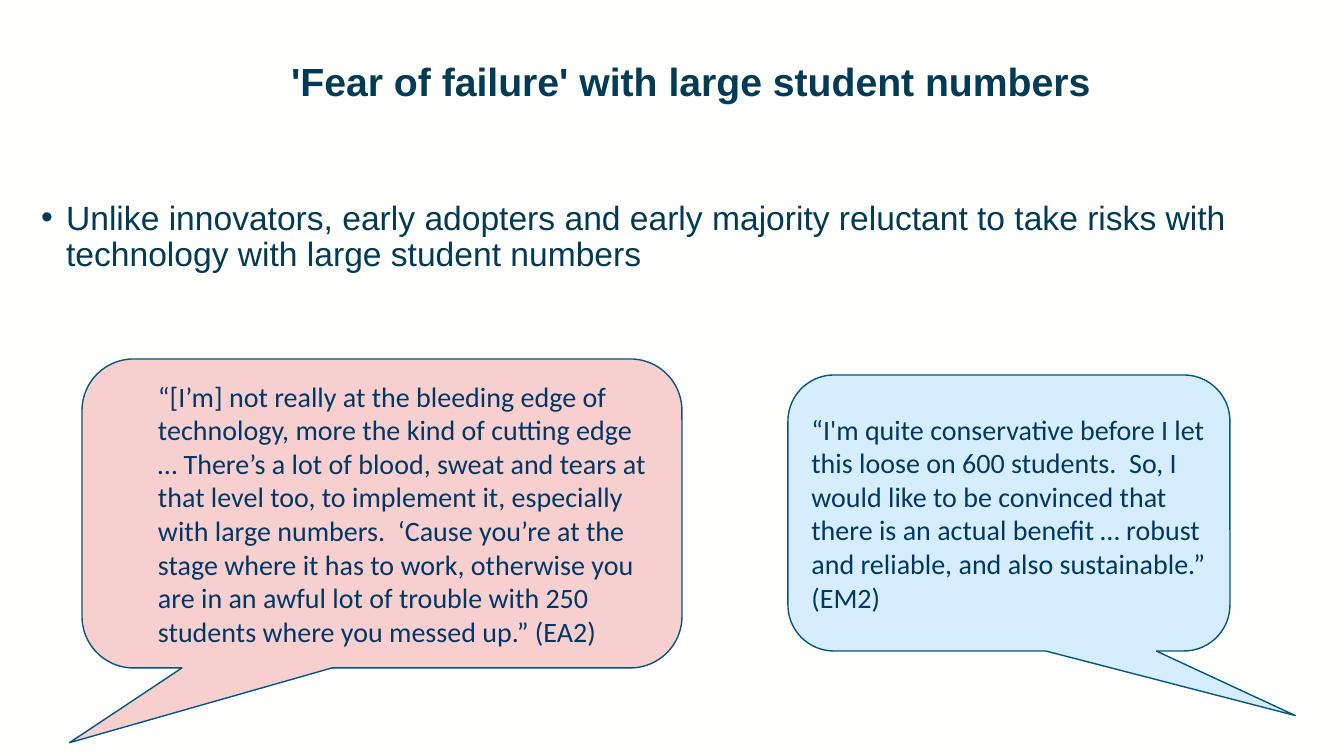
"""Builds the slide about fear of failure with large student numbers."""
from lxml import etree
from pptx import Presentation
from pptx import util as u
from pptx.dml.color import RGBColor
from pptx.enum import shapes, text
from pptx.oxml.ns import qn

PX = 914400 / 100.8


def color(value):
    return RGBColor.from_string(value)


def write(shape, words, size, font="Arial", ink="003B58", bold=False, spacing=None,
          anchor=text.MSO_ANCHOR.TOP, margin=0, indent=0, bullet=None, after=0):
    frame = shape.text_frame
    frame.word_wrap = True
    frame.auto_size = text.MSO_AUTO_SIZE.NONE
    frame.vertical_anchor = anchor
    paragraph = frame.paragraphs[0]
    properties = paragraph._p.get_or_add_pPr()
    properties.set("marL", str(round(margin * PX)))
    properties.set("indent", str(round(indent * PX)))
    if bullet:
        etree.SubElement(properties, qn("a:buChar"), char=bullet)
    paragraph.alignment = text.PP_ALIGN.LEFT
    paragraph.space_before = u.Pt(0)
    paragraph.space_after = u.Pt(after)
    if spacing:
        paragraph.line_spacing = spacing
    run = paragraph.add_run()
    run.text = words
    run.font.size = u.Pt(size)
    run.font.name = font
    run.font.bold = bold
    run.font.color.rgb = color(ink)


presentation = Presentation()
presentation.slide_width = round(1344 * PX)
presentation.slide_height = round(756 * PX)
slide = presentation.slides.add_slide(presentation.slide_layouts[1])
slide.background.fill.solid()
slide.background.fill.fore_color.rgb = color("FFFFFE")

title, body = slide.placeholders
for placeholder, box in ((title, (281, 58, 1015, 98)), (body, (31, 196, 1265, 492))):
    placeholder.left, placeholder.top, placeholder.width, placeholder.height = (
        round(length * PX) for length in box)

write(title, "'Fear of failure' with large student numbers", 28, bold=True, spacing=0.9)
write(body, "Unlike innovators, early adopters and early majority reluctant to take risks "
      "with technology with large student numbers",
      24, spacing=0.9, margin=25, indent=-25, bullet="•")

quotes = [
    ((82, 359, 600, 309), (-0.521, 0.742, 0.167), "F8CFCF", 51, 8,
     "“[I’m] not really at the bleeding edge of technology, more the kind of cutting edge "
     "… There’s a lot of blood, sweat and tears at that level too, to implement it, "
     "especially with large numbers.  ‘Cause you’re at the stage where it has to work, "
     "otherwise you are in an awful lot of trouble with 250 students where you messed "
     "up.” (EA2)"),
    ((788, 375, 442, 276), (0.648, 0.734, 0.167), "D6EDFF", 0, 0,
     "“I'm quite conservative before I let this loose on 600 students.  So, I would like "
     "to be convinced that there is an actual benefit … robust and reliable, and also "
     "sustainable.” (EM2)"),
]
for box, pointer, fill, margin, after, words in quotes:
    callout = slide.shapes.add_shape(shapes.MSO_SHAPE.ROUNDED_RECTANGULAR_CALLOUT,
                                     *(round(length * PX) for length in box))
    for index, value in enumerate(pointer):
        callout.adjustments[index] = value
    callout.shadow.inherit = False
    callout.fill.solid()
    callout.fill.fore_color.rgb = color(fill)
    callout.line.color.rgb = color("005782")
    callout.line.width = u.Pt(1)
    write(callout, words, 20, font="Calibri", ink="003865",
          anchor=text.MSO_ANCHOR.MIDDLE, margin=margin, after=after)

presentation.save("out.pptx")
